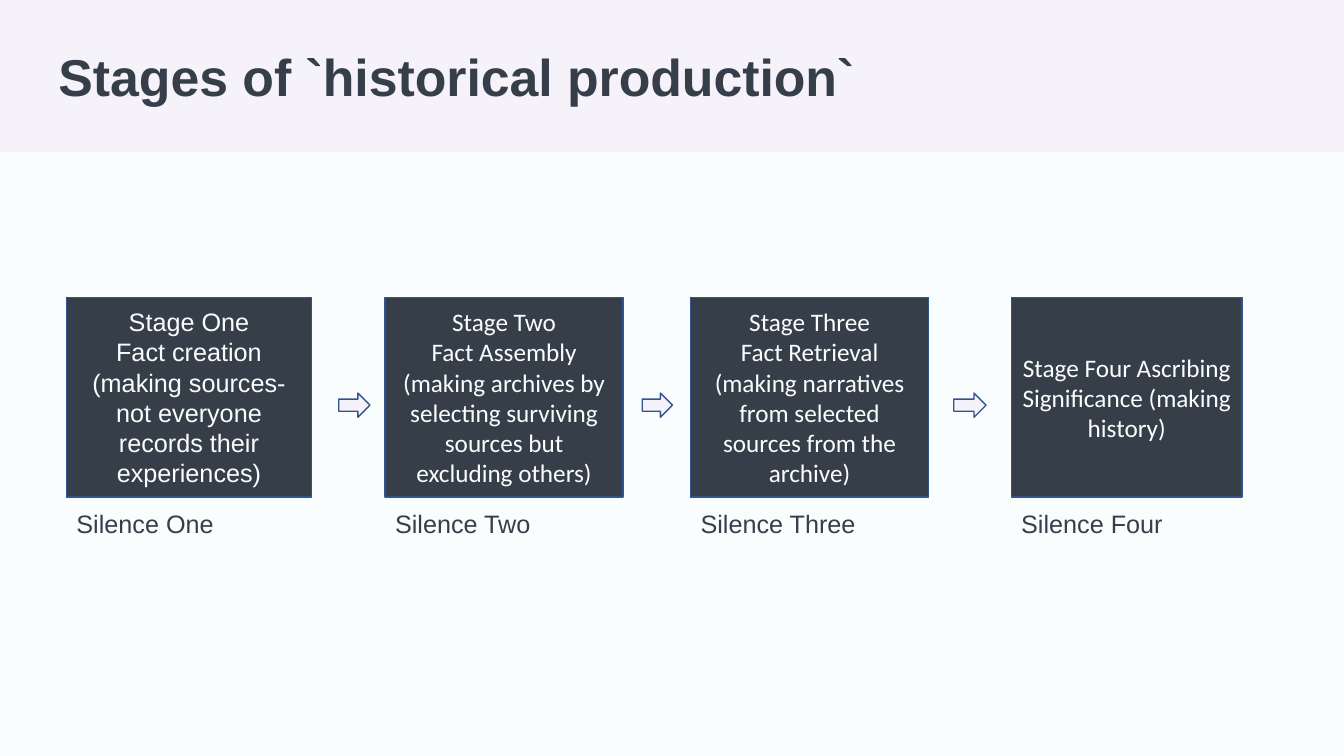
from pptx import Presentation
from pptx.dml.color import RGBColor
from pptx.enum.shapes import MSO_SHAPE
from pptx.enum.text import MSO_ANCHOR, PP_ALIGN
from pptx.util import Inches, Pt

DARK, PALE, LILAC, BLUE = "363F49", "FAFDFE", "F6F2FA", "31538F"
BOX_TOP, BOX_HEIGHT = 2.95, 1.98
ARROW_HEIGHT = 0.24

# left, width, font, paragraphs, label
STAGES = [
    (0.66, 2.43, "Arial",
     ["Stage One", "Fact creation (making sources- not everyone records their experiences)"],
     "Silence One"),
    (3.82, 2.36, "Calibri",
     ["Stage Two", "Fact Assembly (making archives by selecting surviving sources but excluding others)"],
     "Silence Two"),
    (6.85, 2.36, "Calibri",
     ["Stage Three", "Fact Retrieval (making narratives from selected sources from the archive)"],
     "Silence Three"),
    (10.03, 2.29, "Calibri",
     ["Stage Four Ascribing Significance (making history)"],
     "Silence Four"),
]
ARROWS = [(3.36, 0.31), (6.37, 0.3), (9.46, 0.32)]  # left, width


def color(value):
    return RGBColor.from_string(value)


def write(shape, paragraphs, font, size, ink, align, anchor, insets, bold=False, spacing=None):
    """Fill a shape with paragraphs; insets are the side and the top/bottom margin."""
    frame = shape.text_frame
    side, edge = (Inches(inset) for inset in insets)
    settings = {"word_wrap": True, "vertical_anchor": anchor,
                "margin_left": side, "margin_right": side,
                "margin_top": edge, "margin_bottom": edge}
    for name, value in settings.items():
        setattr(frame, name, value)
    for index, text in enumerate(paragraphs):
        para = frame.paragraphs[0] if index == 0 else frame.add_paragraph()
        para.alignment = align
        para.line_spacing = spacing
        span = para.add_run()
        span.text = text
        for name, value in {"name": font, "size": Pt(size), "bold": bold}.items():
            setattr(span.font, name, value)
        span.font.color.rgb = color(ink)


def add_block(page, kind, box, fill, line, line_width=1):
    block = page.shapes.add_shape(kind, *map(Inches, box))
    block.shadow.inherit = False
    block.fill.solid()
    block.fill.fore_color.rgb = color(fill)
    block.line.color.rgb = color(line)
    block.line.width = Pt(line_width)
    return block


def add_header(page, box):
    left, top, width, height = box
    title = page.shapes.title
    band = add_block(page, MSO_SHAPE.RECTANGLE, box, LILAC, "F3F3F3", 0.75)
    title.element.addprevious(band.element)  # keeps the band behind the title
    place = {"left": left + 0.45, "top": top + 0.26, "width": 11.9, "height": 0.99}
    for name, value in place.items():
        setattr(title, name, Inches(value))
    write(title, ["Stages of `historical production`"], "Arial", 37, DARK,
          PP_ALIGN.LEFT, MSO_ANCHOR.MIDDLE, (0.13, 0.13), bold=True)


def add_stage(page, box, font, paragraphs, label):
    left, top, width, height = box
    block = add_block(page, MSO_SHAPE.RECTANGLE, box, DARK, BLUE)
    write(block, paragraphs, font, 18, PALE, PP_ALIGN.CENTER, MSO_ANCHOR.MIDDLE,
          (0.1, 0.05), spacing=Pt(21.6))
    caption = page.shapes.add_textbox(
        *map(Inches, (left, top + height + 0.06, width, 0.4)))
    write(caption, [label], "Arial", 18, DARK, PP_ALIGN.LEFT, MSO_ANCHOR.TOP, (0.1, 0.05))


def add_process(page, top, height):
    for left, width, font, paragraphs, label in STAGES:
        add_stage(page, (left, top, width, height), font, paragraphs, label)
    for left, width in ARROWS:
        box = (left, top + 0.95, width, ARROW_HEIGHT)
        add_block(page, MSO_SHAPE.RIGHT_ARROW, box, LILAC, BLUE)


def main():
    deck = Presentation()
    deck.slide_width, deck.slide_height = Inches(13.33), Inches(7.5)
    page = deck.slides.add_slide(deck.slide_layouts.get_by_name("Title Only"))
    page.background.fill.solid()
    page.background.fill.fore_color.rgb = color(PALE)
    add_header(page, (0, 0, 13.33, 1.5))
    add_process(page, BOX_TOP, BOX_HEIGHT)
    deck.save("out.pptx")


if __name__ == "__main__":
    main()
